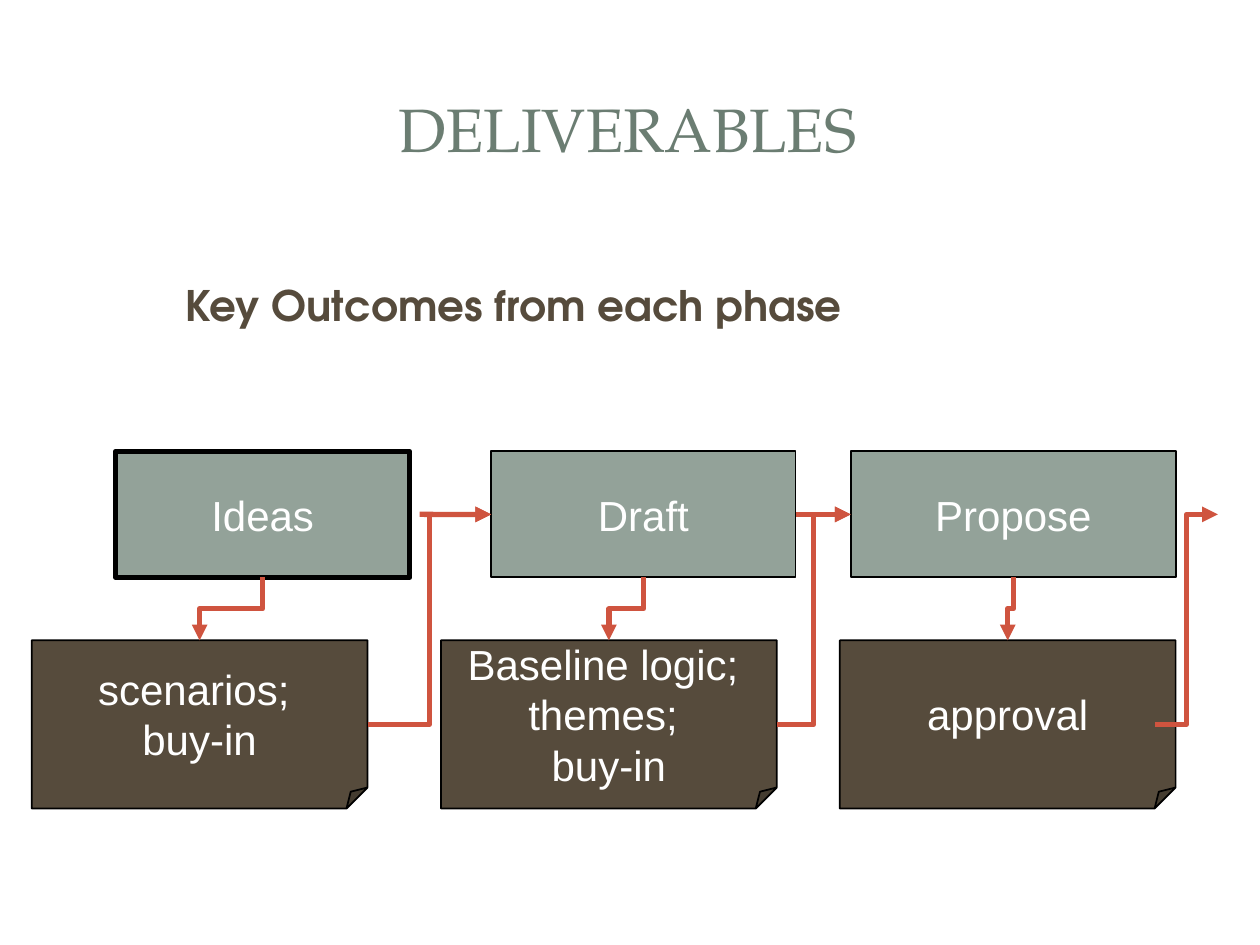
"""Build the Deliverables slide: three phases, each with its key outcome."""
from pptx import Presentation
from pptx.dml.color import RGBColor
from pptx.enum.shapes import MSO_CONNECTOR, MSO_SHAPE
from pptx.enum.text import MSO_ANCHOR, PP_ALIGN
from pptx.oxml.ns import qn
from pptx.util import Cm, Pt
from lxml.etree import SubElement

TITLE = "DELIVERABLES"
SUBTITLE = "Key Outcomes from each phase"
PHASES = [
    {"name": "Ideas", "x": 2.33, "w": 5.93, "border": 3,
     "outcome": "scenarios; \nbuy-in", "outcome_x": 0.64},
    {"name": "Draft", "x": 9.9, "w": 6.14, "border": 1,
     "outcome": "Baseline logic; \nthemes; \nbuy-in", "outcome_x": 8.89},
    {"name": "Propose", "x": 17.15, "w": 6.56, "border": 1,
     "outcome": "approval", "outcome_x": 16.93},
]
BOX_Y, BOX_H = 9.1, 2.54
NOTE_Y, NOTE_W, NOTE_H = 12.91, 6.77, 3.39
FOLD = 12500
FIRST_LINK_X = 8.46
LAST_EXIT = (23.28, 24.55)

THEME = {
    "title": ("TeX Gyre Pagella", 35, "6B7D72", False),
    "subtitle": ("TeX Gyre Adventor", 24, "564B3C", True),
    "label": ("Arial", 24, "FFFFFF", False),
    "box": "93A299", "note": "564B3C", "border": "000000",
    "arrow": "CF543F", "arrow_pt": 3,
}


def rgb(key):
    return RGBColor.from_string(THEME[key])


def write(sp, text, style, align, anchor, wrap):
    name, size, color, bold = THEME[style]
    tf = sp.text_frame
    tf.text = text
    tf.word_wrap = wrap
    tf.vertical_anchor = anchor
    for p in tf.paragraphs:
        p.alignment = align
        for r in p.runs:
            r.font.name, r.font.size, r.font.bold = name, Pt(size), bold
            r.font.color.rgb = RGBColor.from_string(color)
    return tf


def add_text(s, box, text, style, align, anchor):
    sp = s.shapes.add_textbox(*map(Cm, box))
    return write(sp, text, style, align, anchor, True)


def add_block(s, kind, box, text, fill, border):
    sp = s.shapes.add_shape(kind, *map(Cm, box))
    sp.shadow.inherit = False
    sp.fill.solid()
    sp.fill.fore_color.rgb = rgb(fill)
    sp.line.color.rgb = rgb("border")
    sp.line.width = Pt(border)
    write(sp, text, "label", PP_ALIGN.CENTER, MSO_ANCHOR.MIDDLE, False)
    return sp


def set_fold(sp):
    geom = sp._element.spPr.find(qn("a:prstGeom"))
    av = geom.find(qn("a:avLst"))
    if av is None:
        av = SubElement(geom, qn("a:avLst"))
    for gd in list(av):
        av.remove(gd)
    SubElement(av, qn("a:gd"), name="adj", fmla=f"val {FOLD}")


def add_arrow(s, kind, x1, y1, x2, y2):
    cx = s.shapes.add_connector(kind, Cm(x1), Cm(y1), Cm(x2), Cm(y2))
    cx.line.color.rgb = rgb("arrow")
    cx.line.width = Pt(THEME["arrow_pt"])
    spPr = cx._element.spPr
    SubElement(spPr.find(qn("a:ln")), qn("a:tailEnd"), type="triangle")
    SubElement(spPr, qn("a:effectLst"))
    return cx


def add_drop(s, x1, y1, x2, y2):
    mx, my = (x1 + x2) / 2, (y1 + y2) / 2
    half_w, half_h = (y2 - y1) / 2, (x1 - x2) / 2
    cx = add_arrow(s, MSO_CONNECTOR.ELBOW, mx - half_w, my - half_h,
                   mx + half_w, my + half_h)
    cx._element.spPr.find(qn("a:xfrm")).set("rot", "5400000")


def main():
    prs = Presentation()
    prs.slide_width, prs.slide_height = Cm(25.4), Cm(19.05)
    s = prs.slides.add_slide(prs.slide_layouts[6])
    add_text(s, (1.19, 1.14, 22.94, 2.9), TITLE, "title",
             PP_ALIGN.CENTER, MSO_ANCHOR.MIDDLE)
    tf = add_text(s, (3.18, 5.51, 19.05, 2.11), SUBTITLE, "subtitle",
                  PP_ALIGN.LEFT, MSO_ANCHOR.TOP)
    tf.margin_left = Cm(0.57)

    mid_y = BOX_Y + BOX_H / 2
    boxes = [add_block(s, MSO_SHAPE.RECTANGLE, (ph["x"], BOX_Y, ph["w"], BOX_H),
                       ph["name"], "box", ph["border"]) for ph in PHASES]
    for i in range(1, len(PHASES)):
        prev, ph = PHASES[i - 1], PHASES[i]
        start = FIRST_LINK_X if i == 1 else prev["x"] + prev["w"]
        cx = add_arrow(s, MSO_CONNECTOR.STRAIGHT, start, mid_y, ph["x"], mid_y)
        if i > 1:
            cx.begin_connect(boxes[i - 1], 3)
        cx.end_connect(boxes[i], 1)

    exits = [(ph["outcome_x"] + NOTE_W, nxt["x"])
             for ph, nxt in zip(PHASES, PHASES[1:])] + [LAST_EXIT]
    for ph, (x1, x2) in zip(PHASES, exits):
        note = add_block(s, MSO_SHAPE.FOLDED_CORNER,
                         (ph["outcome_x"], NOTE_Y, NOTE_W, NOTE_H),
                         ph["outcome"], "note", 1)
        set_fold(note)
        add_drop(s, ph["x"] + ph["w"] / 2, BOX_Y + BOX_H,
                 ph["outcome_x"] + NOTE_W / 2, NOTE_Y)
        add_arrow(s, MSO_CONNECTOR.ELBOW, x1, NOTE_Y + NOTE_H / 2, x2, mid_y)
    prs.save("out.pptx")


if __name__ == "__main__":
    main()
